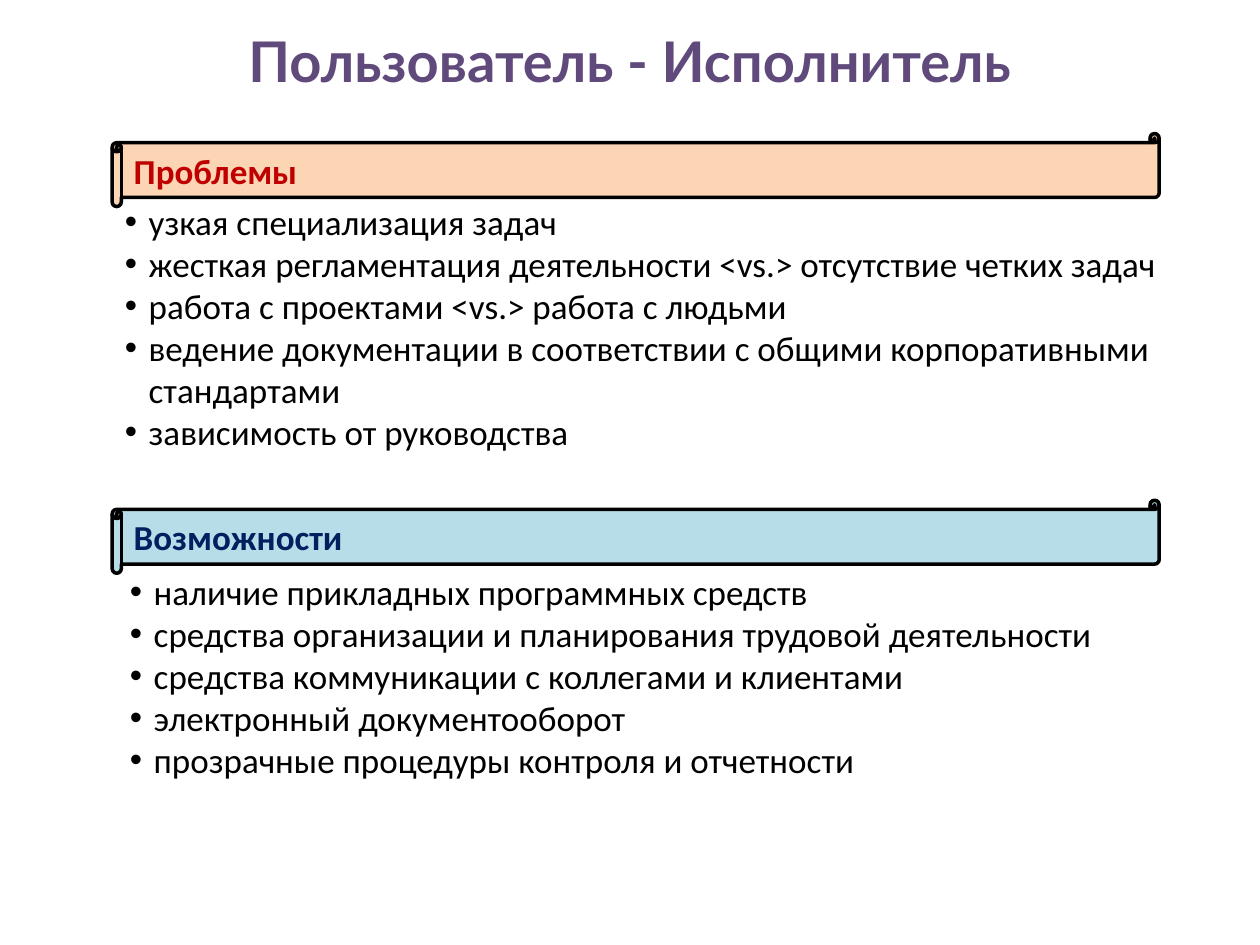
import dataclasses

import pptx
import pptx.dml.color
import pptx.enum.shapes
import pptx.enum.text
import pptx.util

Inches = pptx.util.Inches
Pt = pptx.util.Pt
Align = pptx.enum.text.PP_ALIGN
Anchor = pptx.enum.text.MSO_ANCHOR
Fit = pptx.enum.text.MSO_AUTO_SIZE

COLORS = {
    "title": "604A7B",
    "text": "000000",
    "line": "000000",
    "peach": "FCD5B5",
    "red": "C00000",
    "aqua": "B7DEE8",
    "navy": "002060",
}
INDENT = Inches(0.19)


@dataclasses.dataclass
class Part:
    head: str
    top: float
    fill: str
    ink: str
    box: tuple[float, float, float, float]
    items: list[str]


PARTS = [
    Part("Проблемы", 1.06, "peach", "red", (0.89, 1.54, 8.47, 2.12), [
        "узкая специализация задач",
        "жесткая регламентация деятельности <vs.> отсутствие четких задач",
        "работа с проектами <vs.> работа с людьми",
        "ведение документации в соответствии с общими корпоративными стандартами",
        "зависимость от руководства",
    ]),
    Part("Возможности", 3.97, "aqua", "navy", (0.93, 4.48, 8.27, 1.78), [
        "наличие прикладных программных средств",
        "средства организации и планирования трудовой деятельности",
        "средства коммуникации с коллегами и клиентами",
        "электронный документооборот",
        "прозрачные процедуры контроля и отчетности",
    ]),
]


def color(name: str) -> pptx.dml.color.RGBColor:
    return pptx.dml.color.RGBColor.from_string(COLORS[name])


def place(shape, left: float, top: float, width: float, height: float) -> None:
    shape.left, shape.top = Inches(left), Inches(top)
    shape.width, shape.height = Inches(width), Inches(height)


def write(para, text: str, ink: str, size: int = 20,
          face: str = "Calibri", bold: bool = False) -> None:
    run = para.add_run()
    run.text = text
    run.font.name = face
    run.font.size = Pt(size)
    run.font.bold = bold
    run.font.color.rgb = color(ink)


def draw_title(shape, text: str) -> None:
    place(shape, 0.5, 0.16, 9, 1.17)
    frame = shape.text_frame
    frame.vertical_anchor = Anchor.TOP
    frame.auto_size = Fit.NONE
    para = frame.paragraphs[0]
    para.alignment = Align.CENTER
    write(para, text, "title", 32, "Lato", True)


def draw_scroll(slide, part: Part) -> None:
    shape = slide.shapes.add_shape(
        pptx.enum.shapes.MSO_SHAPE.HORIZONTAL_SCROLL,
        Inches(0.89), Inches(part.top), Inches(8.31), Inches(0.58))
    shape.shadow.inherit = False
    shape.fill.solid()
    shape.fill.fore_color.rgb = color(part.fill)
    shape.line.color.rgb = color("line")
    shape.line.width = Pt(2)
    frame = shape.text_frame
    frame.word_wrap = True
    frame.auto_size = Fit.SHAPE_TO_FIT_TEXT
    para = frame.paragraphs[0]
    para.alignment = Align.LEFT
    write(para, part.head, part.ink, bold=True)


def draw_list(shape, part: Part) -> None:
    """Fill a body placeholder; its bullets come from the template."""
    place(shape, *part.box)
    frame = shape.text_frame
    frame.vertical_anchor = Anchor.TOP
    frame.auto_size = Fit.SHAPE_TO_FIT_TEXT
    for i, item in enumerate(part.items):
        para = frame.add_paragraph() if i else frame.paragraphs[0]
        para.space_before = Pt(0)
        props = para._p.get_or_add_pPr()
        props.set("marL", str(INDENT))
        props.set("indent", str(-INDENT))
        write(para, item, "text")


def main() -> None:
    deck = pptx.Presentation()
    deck.slide_width, deck.slide_height = Inches(10), Inches(7.5)
    slide = deck.slides.add_slide(deck.slide_layouts.get_by_name("Two Content"))
    draw_title(slide.shapes.title, "Пользователь - Исполнитель")
    for idx, part in enumerate(PARTS, 1):
        draw_scroll(slide, part)
        draw_list(slide.placeholders[idx], part)
    deck.save("out.pptx")


if __name__ == "__main__":
    main()
